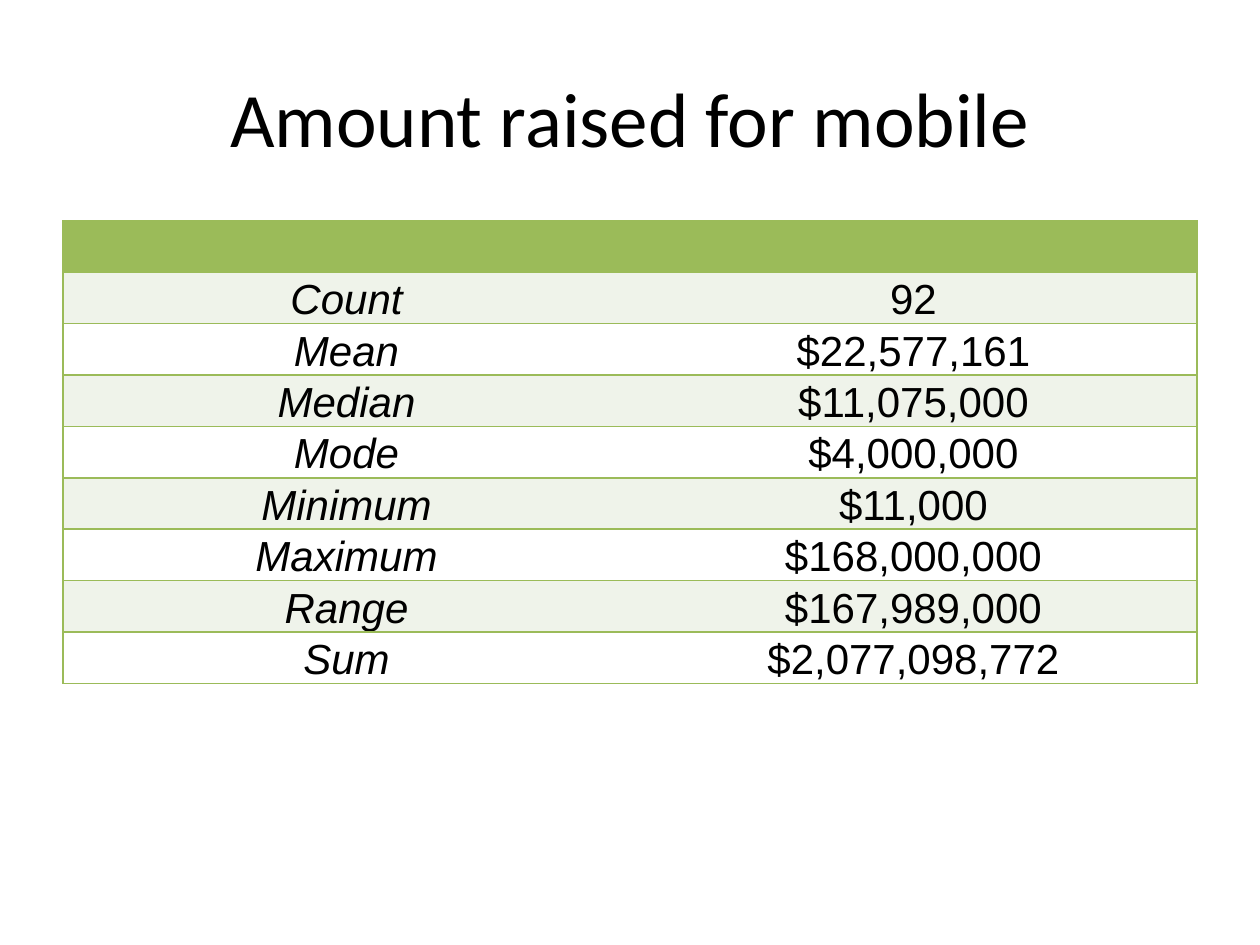
from lxml import etree
from pptx import Presentation
from pptx import util as u
from pptx.dml.color import RGBColor
from pptx.enum import text
from pptx.oxml import ns

# Content
TITLE = "Amount raised for mobile"
STATISTICS = [
    ("", ""),
    ("Count", "92"),
    ("Mean", "$22,577,161"),
    ("Median", "$11,075,000"),
    ("Mode", "$4,000,000"),
    ("Minimum", "$11,000"),
    ("Maximum", "$168,000,000"),
    ("Range", "$167,989,000"),
    ("Sum", "$2,077,098,772"),
]

BLACK = RGBColor(0, 0, 0)
WHITE = RGBColor(255, 255, 255)
GREEN = RGBColor(0x9B, 0xBB, 0x59)
PALE_GREEN = RGBColor(0xEF, 0xF3, 0xEA)

PX = u.Inches(1) // 126
SLIDE_W, SLIDE_H = 1260, 945
MARGIN = 63
CONTENT_W = SLIDE_W - 2 * MARGIN
TITLE_TOP, TITLE_H = 38, 157
TABLE_TOP, ROW_H = 221, 51


def write(frame, words, size, font, italic=False):
    paragraph = frame.paragraphs[0]
    paragraph.alignment = text.PP_ALIGN.CENTER
    run = paragraph.add_run()
    run.text = words
    run.font.size = u.Pt(size)
    run.font.name = font
    run.font.italic = italic
    run.font.color.rgb = BLACK


def set_borders(cell, visible):
    """Rule the named sides in green and clear the others."""
    properties = cell._tc.get_or_add_tcPr()
    for position, side in enumerate("LRTB"):
        line = etree.Element(ns.qn(f"a:ln{side}"), w=str(u.Pt(1)))
        if side in visible:
            fill = etree.SubElement(line, ns.qn("a:solidFill"))
            etree.SubElement(fill, ns.qn("a:srgbClr"), val=str(GREEN))
        else:
            etree.SubElement(line, ns.qn("a:noFill"))
        properties.insert(position, line)


deck = Presentation()
deck.slide_width, deck.slide_height = SLIDE_W * PX, SLIDE_H * PX
slide = deck.slides.add_slide(deck.slide_layouts[6])

# Title
heading = slide.shapes.add_textbox(
    MARGIN * PX, TITLE_TOP * PX, CONTENT_W * PX, TITLE_H * PX).text_frame
heading.word_wrap = True
heading.vertical_anchor = text.MSO_ANCHOR.MIDDLE
write(heading, TITLE, 44, "Calibri")

# Statistics table
statistics = slide.shapes.add_table(
    len(STATISTICS), 2, MARGIN * PX, TABLE_TOP * PX,
    CONTENT_W * PX, len(STATISTICS) * ROW_H * PX).table
statistics.horz_banding = False
statistics.first_row = False

for row, entry in enumerate(STATISTICS):
    statistics.rows[row].height = ROW_H * PX
    band = GREEN if row == 0 else PALE_GREEN if row % 2 else WHITE
    for column, words in enumerate(entry):
        cell = statistics.cell(row, column)
        cell.margin_left = cell.margin_right = cell.margin_top = PX
        cell.margin_bottom = 0
        cell.vertical_anchor = text.MSO_ANCHOR.BOTTOM
        cell.fill.solid()
        cell.fill.fore_color.rgb = band
        set_borders(cell, "LTB" if column == 0 else "RTB")
        if words:
            write(cell.text_frame, words, 24, "Arial", italic=column == 0)

deck.save("out.pptx")
